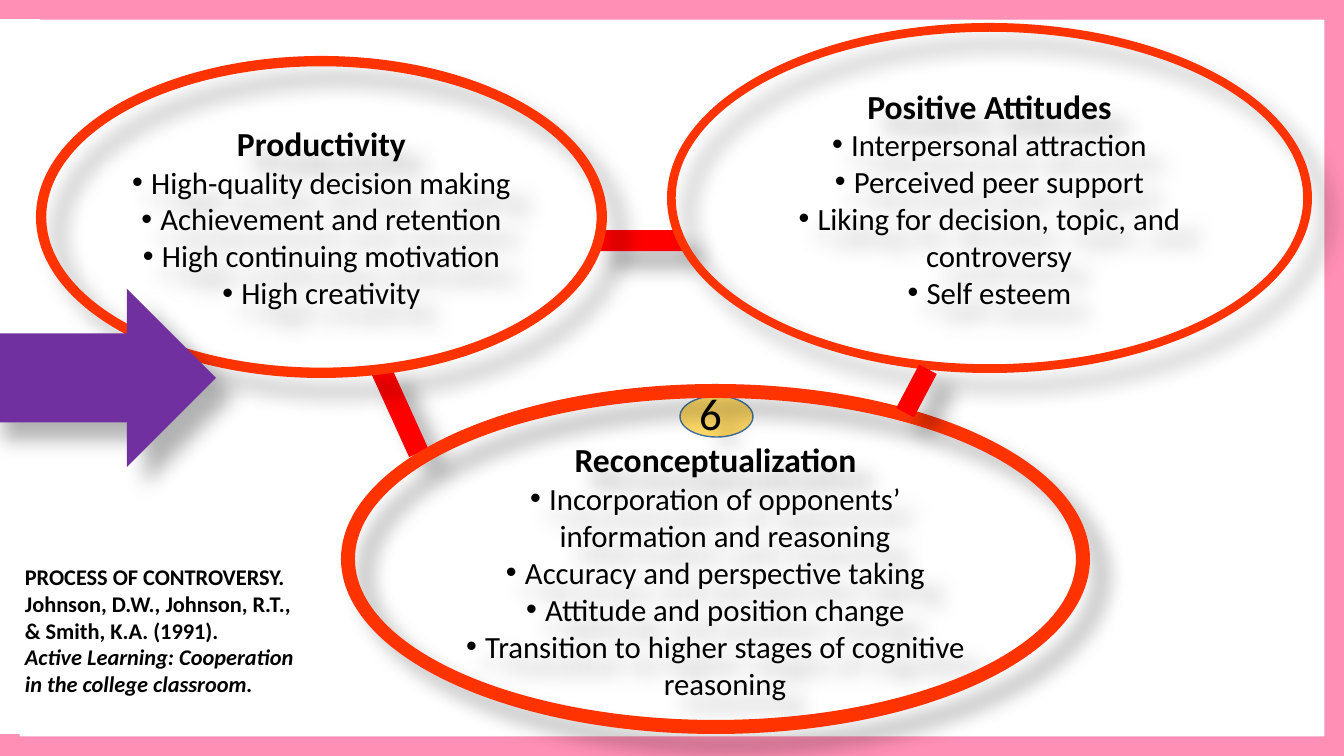
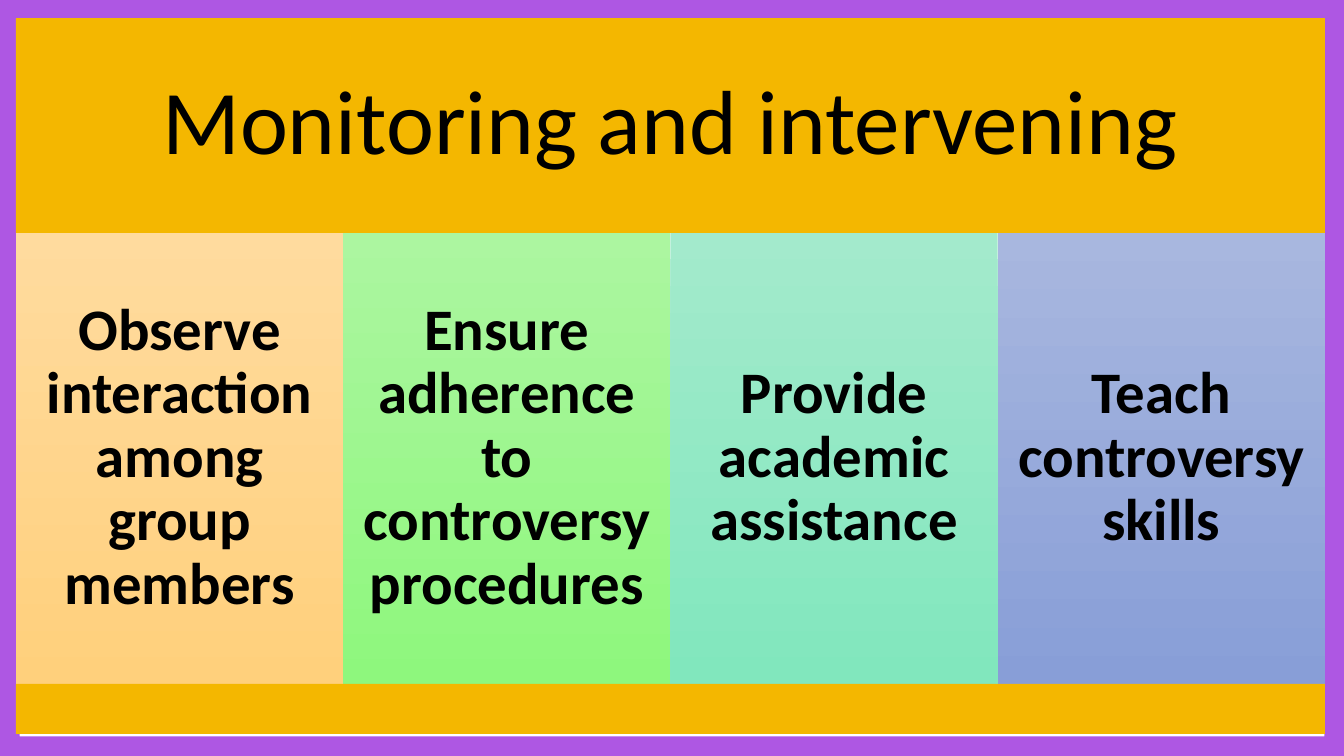
"""Build two slides on the process of controversy and its monitoring."""
import pptx
import pptx.util
import pptx.dml.color
import pptx.enum.shapes
import pptx.enum.text
import lxml.etree

RGB = pptx.dml.color.RGBColor
KIND = pptx.enum.shapes.MSO_SHAPE
ALIGN = pptx.enum.text.PP_ALIGN
ANCHOR = pptx.enum.text.MSO_ANCHOR
SIZE = pptx.enum.text.MSO_AUTO_SIZE
NS = "http://schemas.openxmlformats.org/drawingml/2006/main"

WIDE, HIGH = 1344, 756
UNIT = 914400 / 100.8
FONT = "Calibri"
BLACK = RGB(0, 0, 0)
WHITE = RGB(0xFF, 0xFF, 0xFF)
PINK = RGB(0xFF, 0x8F, 0xB4)
VIOLET = RGB(0xAE, 0x57, 0xE3)
PURPLE = RGB(0x70, 0x30, 0xA0)
RED = RGB(0xFF, 0, 0)
ORANGE = RGB(0xFF, 0x33, 0)
GOLD = RGB(0xF4, 0xB7, 0)
SAND = RGB(0xFF, 0xD9, 0x66)
STEEL = RGB(0x43, 0x73, 0x9E)

RINGS = [
    ((36, 56, 571, 322), 0.032, None, "Productivity", [
        "High-quality decision making",
        "Achievement and retention",
        "High continuing motivation",
        "High creativity",
    ]),
    ((341, 384, 749, 350), 0.04, "6 ", "Reconceptualization", [
        "Incorporation of opponents’ information and reasoning",
        "Accuracy and perspective taking",
        "Attitude and position change",
        "Transition to higher stages of cognitive reasoning",
    ]),
    ((667, 23, 645, 350), 0.025, None, "Positive Attitudes", [
        "Interpersonal attraction",
        "Perceived peer support",
        "Liking for decision, topic, and controversy",
        "Self esteem",
    ]),
]
BACK_BARS = [((596, 230, 86, 21), 180), ((353, 400, 93, 21), 245.6)]
FRONT_BARS = [((892, 381, 49, 20), 297.8)]
SOURCE = [
    ("PROCESS OF CONTROVERSY. Johnson, D.W., Johnson, R.T., "
     "& Smith, K.A. (1991).", {}),
    ("Active Learning: Cooperation in the college classroom.",
     {"italic": True}),
]

TITLE = "Monitoring and intervening"
TASKS = [
    ("Observe interaction among group members", "FFDB9E", "FFD07C"),
    ("Ensure adherence to controversy procedures", "ACF6A0", "8EF77D"),
    ("Provide academic assistance", "A3EACC", "81E7BD"),
    ("Teach controversy skills", "A8B7DF", "889ED7"),
]
LEFT, SPAN = 16, 1309
TOP, BODY, FOOT, END = 18, 233, 684, 734


def px(num):
    return pptx.util.Emu(round(num * UNIT))


def sub(node, tag, **attrs):
    return lxml.etree.SubElement(node, f"{{{NS}}}{tag}", attrs)


def shade(shape):
    """Cast a soft shadow down and to the right."""
    effects = shape.element.spPr.find(f"{{{NS}}}effectLst")
    cast = sub(effects, "outerShdw", blurRad="190500", dist="228600",
               dir="2700000", algn="tl", rotWithShape="0")
    color = sub(cast, "srgbClr", val="000000")
    sub(color, "alpha", val="30000")


def draw(slide, kind, box, fill=None, line=None, adj=None, turn=0,
         shadow=False):
    """Add one preset shape."""
    shape = slide.shapes.add_shape(kind, *map(px, box))
    if fill is not None:
        shape.fill.solid()
        shape.fill.fore_color.rgb = fill
    if line is None:
        shape.line.fill.background()
    else:
        shape.line.color.rgb = line
        shape.line.width = pptx.util.Pt(1)
    if adj is not None:
        shape.adjustments[0] = adj
    shape.rotation = turn
    shape.shadow.inherit = False
    if shadow:
        shade(shape)
    return shape


def write(shape, text, size=22, bold=False, italic=False, bullet=False,
          align=ALIGN.CENTER, space=None, more=False):
    """Write one paragraph, after those present if more is set."""
    frame = shape.text_frame
    frame.word_wrap = True
    para = frame.add_paragraph() if more else frame.paragraphs[0]
    para.alignment = align
    if space:
        para.line_spacing = space
    if bullet:
        props = para._p.get_or_add_pPr()
        props.set("marL", str(px(19)))
        props.set("indent", str(-px(19)))
        sub(props, "buFont", typeface="Arial")
        sub(props, "buChar", char="•")
    run = para.add_run()
    run.text = text
    font = run.font
    font.name, font.size = FONT, pptx.util.Pt(size)
    font.bold, font.italic = bold, italic
    font.color.rgb = BLACK


def inset(shape, gap):
    """Centre the text upright, with one margin all round."""
    frame = shape.text_frame
    frame.vertical_anchor = ANCHOR.MIDDLE
    frame.auto_size = SIZE.NONE
    frame.margin_left = frame.margin_right = px(gap)
    frame.margin_top = frame.margin_bottom = px(gap)


def start(deck, layout, color):
    """Add a slide with its coloured border."""
    slide = deck.slides.add_slide(deck.slide_layouts[layout])
    border = draw(slide, KIND.FRAME, (0, 0, WIDE, HIGH), color, adj=0.026)
    return slide, border


def link(slide, bars):
    for box, turn in bars:
        draw(slide, KIND.PENTAGON, box, RED, adj=0, turn=turn, shadow=True)


def process(deck):
    """Build the slide of linked rings."""
    slide, _ = start(deck, 6, PINK)
    draw(slide, KIND.RECTANGLE, (-9, 19, 49, 715), WHITE)
    draw(slide, KIND.OVAL, (680, 396, 73, 41), SAND, STEEL)
    link(slide, BACK_BARS)
    for box, adj, mark, head, points in RINGS:
        ring = draw(slide, KIND.DONUT, box, ORANGE, adj=adj, shadow=True)
        ring.text_frame.vertical_anchor = ANCHOR.MIDDLE
        if mark:
            write(ring, mark, size=32)
            ring.text_frame.margin_bottom = px(36)
        write(ring, head, size=24, bold=True, more=bool(mark))
        for point in points:
            write(ring, point, bullet=True, more=True)
    link(slide, FRONT_BARS)
    draw(slide, KIND.RIGHT_ARROW, (-15, 289, 231, 178), PURPLE, shadow=True)
    note = slide.shapes.add_textbox(*map(px, (15, 558, 290, 173)))
    for i, (text, style) in enumerate(SOURCE):
        write(note, text, size=16, bold=True, align=ALIGN.LEFT, more=i > 0,
              **style)


def monitor(deck):
    """Build the slide of four tasks under a title band."""
    slide, border = start(deck, 5, VIOLET)
    title = slide.shapes.title
    border.element.addnext(title.element)
    title.left, title.top = px(LEFT), px(TOP)
    title.width, title.height = px(SPAN), px(BODY - TOP)
    title.fill.solid()
    title.fill.fore_color.rgb = GOLD
    inset(title, 27)
    write(title, TITLE, size=65, space=0.9)
    step = SPAN / len(TASKS)
    for i, (text, light, dark) in enumerate(TASKS):
        box = (LEFT + i * step, BODY, step, FOOT - BODY)
        tile = draw(slide, KIND.RECTANGLE, box)
        tile.fill.gradient()
        tile.fill.gradient_angle = 270
        for stop, color in zip(tile.fill.gradient_stops, (light, dark)):
            stop.color.rgb = RGB.from_string(color)
        inset(tile, 17)
        write(tile, text, size=42, bold=True, space=0.9)
    draw(slide, KIND.RECTANGLE, (LEFT, FOOT, SPAN, END - FOOT), GOLD)


def main():
    deck = pptx.Presentation()
    deck.slide_width, deck.slide_height = px(WIDE), px(HIGH)
    process(deck)
    monitor(deck)
    deck.save("out.pptx")


if __name__ == "__main__":
    main()
